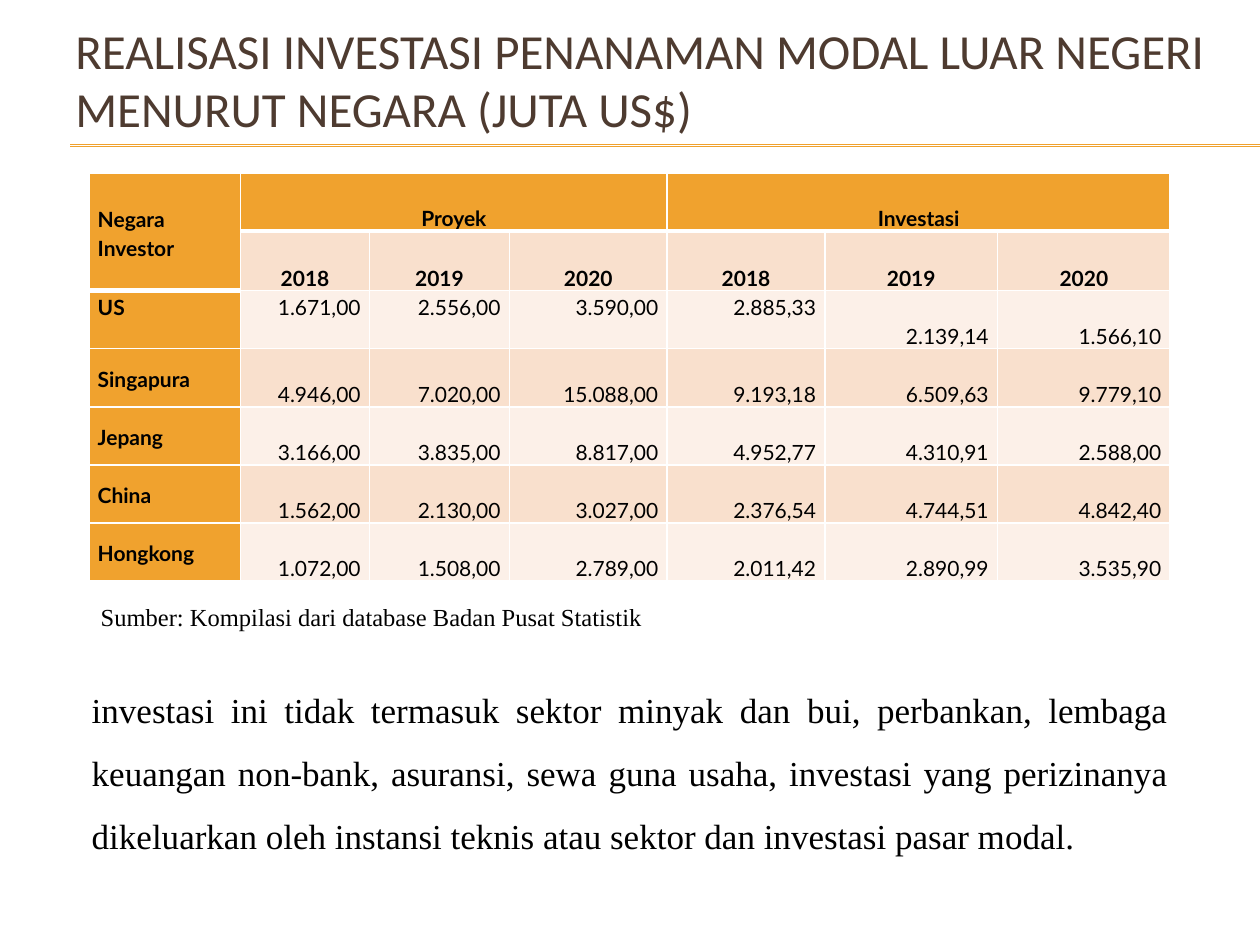
"""Build the slide on foreign investment by country of origin."""
from dataclasses import dataclass

from lxml.etree import SubElement
from pptx import Presentation
from pptx.dml.color import RGBColor
from pptx.enum.shapes import MSO_CONNECTOR
from pptx.enum.text import MSO_ANCHOR, PP_ALIGN
from pptx.oxml.ns import qn
from pptx.slide import Slide
from pptx.table import Table, _Cell
from pptx.text.text import TextFrame
from pptx.util import Cm, Pt

HUES = {
    "gold": "F0A22E",
    "brown": "4E3B30",
    "peach": "F9E0CD",
    "cream": "FCF0E8",
    "black": "000000",
    "white": "FFFFFF",
}
WIDTHS = (3.06, 2.6, 2.82, 3.18, 3.18, 3.48, 3.48)
HEIGHTS = (1.17, 1.2, 1.17, 1.17, 1.17, 1.17, 1.17)
YEARS = ("2018", "2019", "2020")
DATA = (
    ("US", "1.671,00", "2.556,00", "3.590,00", "2.885,33", "2.139,14", "1.566,10"),
    ("Singapura", "4.946,00", "7.020,00", "15.088,00", "9.193,18", "6.509,63", "9.779,10"),
    ("Jepang", "3.166,00", "3.835,00", "8.817,00", "4.952,77", "4.310,91", "2.588,00"),
    ("China", "1.562,00", "2.130,00", "3.027,00", "2.376,54", "4.744,51", "4.842,40"),
    ("Hongkong", "1.072,00", "1.508,00", "2.789,00", "2.011,42", "2.890,99", "3.535,90"),
)


@dataclass(frozen=True)
class Style:
    """Hold the look of one paragraph."""
    font: str
    size: float
    hue: str = "black"
    bold: bool = False
    align: PP_ALIGN = PP_ALIGN.LEFT
    space: float = 1.0
    anchor: MSO_ANCHOR = MSO_ANCHOR.TOP


@dataclass(frozen=True)
class Block:
    """Hold a text box with its place in centimetres."""
    left: float
    top: float
    width: float
    height: float
    text: str
    style: Style


BLOCKS = (
    Block(1.27, 0, 23.62, 3.18,
          "REALISASI INVESTASI PENANAMAN MODAL LUAR NEGERI MENURUT NEGARA (JUTA US$)",
          Style("Calibri", 28, "brown", anchor=MSO_ANCHOR.MIDDLE)),
    Block(1.78, 11.71, 15.34, 1.07,
          "Sumber: Kompilasi dari database Badan Pusat Statistik",
          Style("Times New Roman", 14, align=PP_ALIGN.JUSTIFY, space=1.5)),
    Block(1.6, 13.34, 22.2, 3.94,
          "investasi ini tidak termasuk sektor minyak dan bui, perbankan, lembaga "
          "keuangan non-bank, asuransi, sewa guna usaha, investasi yang perizinanya "
          "dikeluarkan oleh instansi teknis atau sektor dan investasi pasar modal.",
          Style("Times New Roman", 20, align=PP_ALIGN.JUSTIFY, space=1.5)),
)


def tint(hue: str) -> RGBColor:
    """Look up a colour by name."""
    return RGBColor.from_string(HUES[hue])


def write(frame: TextFrame, text: str, style: Style) -> None:
    """Put one styled run in the first paragraph."""
    para = frame.paragraphs[0]
    para.alignment = style.align
    para.line_spacing = style.space
    run = para.add_run()
    run.text = text
    run.font.name = style.font
    run.font.size = Pt(style.size)
    run.font.bold = style.bold
    run.font.color.rgb = tint(style.hue)


def add_block(slide: Slide, block: Block) -> None:
    """Draw a wrapped text box."""
    box = slide.shapes.add_textbox(
        Cm(block.left), Cm(block.top), Cm(block.width), Cm(block.height))
    box.text_frame.word_wrap = True
    box.text_frame.vertical_anchor = block.style.anchor
    write(box.text_frame, block.text, block.style)


def add_rule(slide: Slide, top: float) -> None:
    """Draw a gold rule up to the right edge."""
    rule = slide.shapes.add_connector(
        MSO_CONNECTOR.STRAIGHT, Cm(1.42), Cm(top), Cm(25.4), Cm(top))
    rule.line.color.rgb = tint("gold")
    rule.line.width = Pt(0.75)
    SubElement(rule._element.spPr, qn("a:effectLst"))


def edge(cell: _Cell, base: float) -> None:
    """Give a cell white borders, with its own base width."""
    props = cell._tc.get_or_add_tcPr()
    for side, width in (("L", 1), ("R", 1), ("T", 1), ("B", base)):
        line = SubElement(props, qn(f"a:ln{side}"), w=str(Pt(width)))
        fill = SubElement(line, qn("a:solidFill"))
        SubElement(fill, qn("a:srgbClr"), val=HUES["white"])


def shade(row: int, col: int) -> str:
    """Choose the fill for a cell."""
    if row == 0 or col == 0:
        return "gold"
    return "peach" if row % 2 else "cream"


def look(row: int, col: int) -> Style:
    """Choose the text style for a cell."""
    head = row < 2
    if col == 0:
        align, anchor = PP_ALIGN.LEFT, MSO_ANCHOR.MIDDLE
    else:
        align = PP_ALIGN.CENTER if head else PP_ALIGN.RIGHT
        anchor = MSO_ANCHOR.BOTTOM
    if row == 2 and col < 5:
        anchor = MSO_ANCHOR.TOP
    return Style("Lato", 12, bold=head or col == 0, align=align,
                 space=1.15, anchor=anchor)


def fill_cell(grid: Table, row: int, col: int, text: str) -> None:
    """Style a cell and write its text."""
    cell = grid.cell(row, col)
    edge(cell, 3 if row == 0 or (row == 1 and col == 0) else 1)
    cell.fill.solid()
    cell.fill.fore_color.rgb = tint(shade(row, col))
    cell.margin_left = cell.margin_right = Cm(0.18)
    cell.margin_top = cell.margin_bottom = Cm(0)
    style = look(row, col)
    cell.vertical_anchor = style.anchor
    if text:
        write(cell.text_frame, text, style)


def add_grid(slide: Slide) -> None:
    """Draw the table of projects and investment."""
    rows = (("Negara Investor", "Proyek", "", "", "Investasi", "", ""),
            ("", *YEARS, *YEARS), *DATA)
    grid = slide.shapes.add_table(
        len(HEIGHTS), len(WIDTHS), Cm(1.79), Cm(3.49),
        Cm(sum(WIDTHS)), Cm(sum(HEIGHTS))).table
    for col, width in zip(grid.columns, WIDTHS):
        col.width = Cm(width)
    for row, height in zip(grid.rows, HEIGHTS):
        row.height = Cm(height)
    for row, texts in enumerate(rows):
        for col, text in enumerate(texts):
            fill_cell(grid, row, col, text)
    grid.cell(0, 0).merge(grid.cell(1, 0))
    for col in (1, 4):
        grid.cell(0, col).merge(grid.cell(0, col + 2))


def main() -> None:
    """Build and save the deck."""
    deck = Presentation()
    deck.slide_width, deck.slide_height = Cm(25.4), Cm(19.05)
    slide = deck.slides.add_slide(deck.slide_layouts[6])
    for top in (2.92, 2.95):
        add_rule(slide, top)
    title, *notes = BLOCKS
    add_block(slide, title)
    add_grid(slide)
    for note in notes:
        add_block(slide, note)
    deck.save("out.pptx")


if __name__ == "__main__":
    main()
